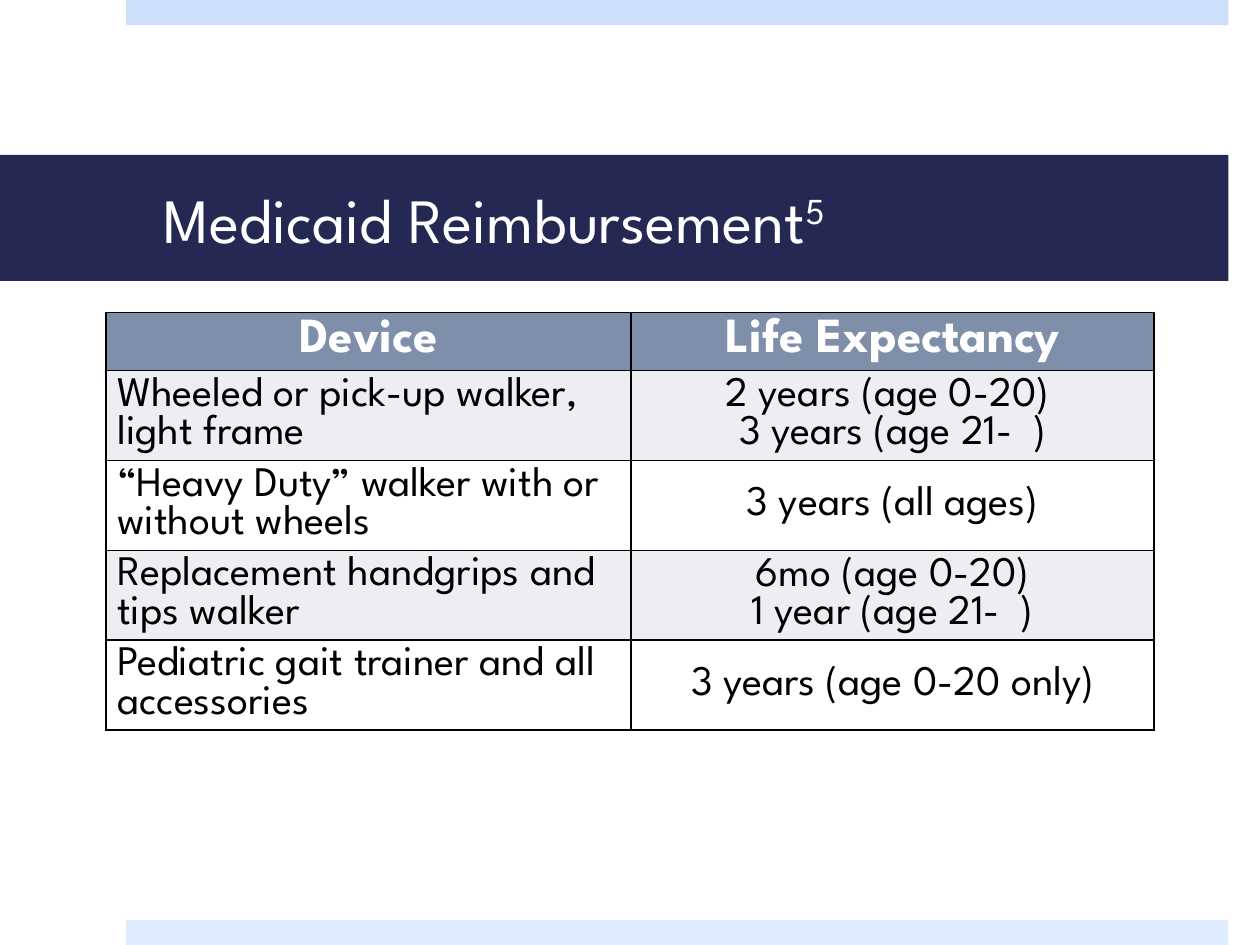
from pptx import Presentation
from pptx.dml.color import RGBColor
from pptx.enum.shapes import MSO_SHAPE
from pptx.enum.text import MSO_ANCHOR, PP_ALIGN
from pptx.oxml import parse_xml
from pptx.oxml.ns import nsdecls
from pptx.util import Inches, Pt

COLORS = {
    "top": "CDE0FB", "foot": "DEEAFD", "navy": "242852", "head": "7F8FA9",
    "band": "ECEEF1", "white": "FFFFFF", "black": "000000",
}
HEADS = ["Device", "Life Expectancy"]
ROWS = [
    ("Wheeled or pick-up walker, light frame", "2 years (age 0-20) \n3 years (age 21-  )"),
    ("“Heavy Duty” walker with or without wheels", "3 years (all ages)"),
    ("Replacement handgrips and tips walker", "6mo (age 0-20)\n1 year (age 21-  )"),
    ("Pediatric gait trainer and all accessories", "3 years (age 0-20 only)"),
]


class Deck:
    font = "League Spartan"

    def __init__(self, slide):
        self.slide = slide

    def color(self, name):
        return RGBColor.from_string(COLORS[name])

    def style(self, run, size, color, bold=False):
        run.font.name = self.font
        run.font.size = Pt(size)
        run.font.bold = bold
        run.font.color.rgb = self.color(color)

    def bar(self, x, y, w, h, fill):
        shape = self.slide.shapes.add_shape(
            MSO_SHAPE.RECTANGLE, Inches(x), Inches(y), Inches(w), Inches(h))
        shape.shadow.inherit = False
        shape.fill.solid()
        shape.fill.fore_color.rgb = self.color(fill)
        shape.line.fill.background()
        return shape

    def title(self, text, note):
        frame = self.bar(0, 1.23, 9.75, 1, "navy").text_frame
        frame.margin_left, frame.margin_right = Inches(1.3), Inches(0.3)
        frame.vertical_anchor = MSO_ANCHOR.MIDDLE
        frame.text = text
        para = frame.paragraphs[0]
        para.alignment = PP_ALIGN.LEFT
        mark = para.add_run()
        mark.text = note
        for run in para.runs:
            self.style(run, 36, "white")
        mark.font._element.set("baseline", "30000")

    def border(self, cell):
        props = cell._tc.get_or_add_tcPr()
        for at, side in enumerate(("lnL", "lnR", "lnT", "lnB")):
            props.insert(at, parse_xml(
                f'<a:{side} {nsdecls("a")} w="12700"><a:solidFill>'
                f'<a:srgbClr val="{COLORS["black"]}"/></a:solidFill></a:{side}>'))

    def cell(self, cell, text, fill, size, color, bold, center):
        cell.text_frame.text = text
        cell.margin_left = cell.margin_right = Inches(0.09)
        cell.margin_top = cell.margin_bottom = Inches(0.05)
        cell.fill.solid()
        cell.fill.fore_color.rgb = self.color(fill)
        self.border(cell)
        for para in cell.text_frame.paragraphs:
            para.alignment = PP_ALIGN.CENTER if center else PP_ALIGN.LEFT
            for run in para.runs:
                self.style(run, size, color, bold)

    def table(self, heads, rows):
        table = self.slide.shapes.add_table(
            len(rows) + 1, len(heads), Inches(0.84), Inches(2.48),
            Inches(8.32), Inches(3.3)).table
        for col, width in zip(table.columns, (4.17, 4.15)):
            col.width = Inches(width)
        table.rows[0].height = Inches(0.46)
        for c, text in enumerate(heads):
            self.cell(table.cell(0, c), text, "head", 28, "white", True, True)
        for r, row in enumerate(rows, 1):
            table.rows[r].height = Inches(0.71)
            fill = "band" if r % 2 else "white"
            for c, text in enumerate(row):
                cell = table.cell(r, c)
                self.cell(cell, text, fill, 24, "black", False, c == 1)
                if c == 1:
                    cell.vertical_anchor = MSO_ANCHOR.MIDDLE


def main():
    prs = Presentation()
    prs.slide_width, prs.slide_height = Inches(10), Inches(7.5)
    deck = Deck(prs.slides.add_slide(prs.slide_layouts[6]))

    # Edge bars
    deck.bar(1, 0, 8.75, 0.2, "top")
    deck.bar(1, 7.3, 8.75, 0.2, "foot")

    # Title band and table
    deck.title("Medicaid Reimbursement", "5")
    deck.table(HEADS, ROWS)

    prs.save("out.pptx")


if __name__ == "__main__":
    main()
